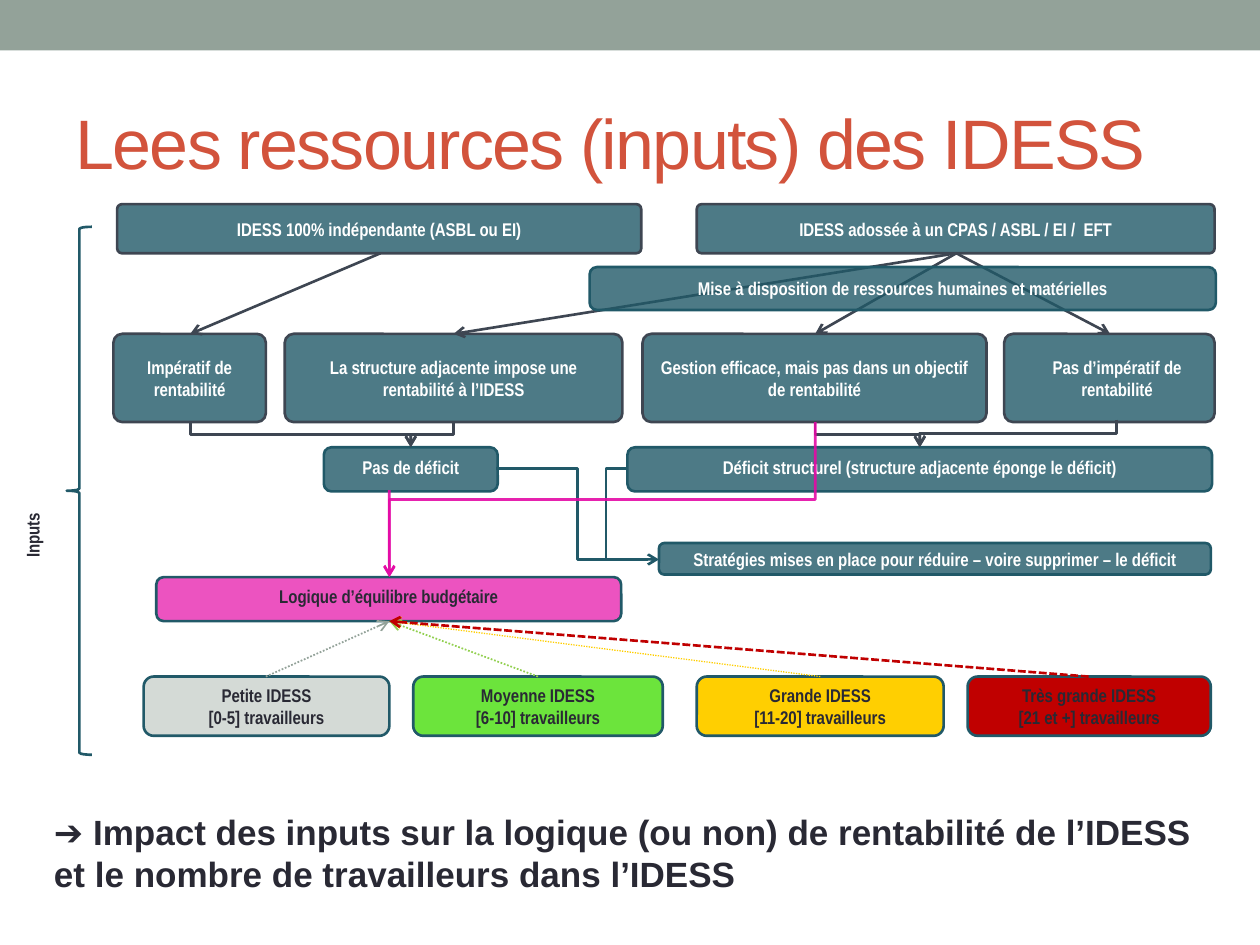
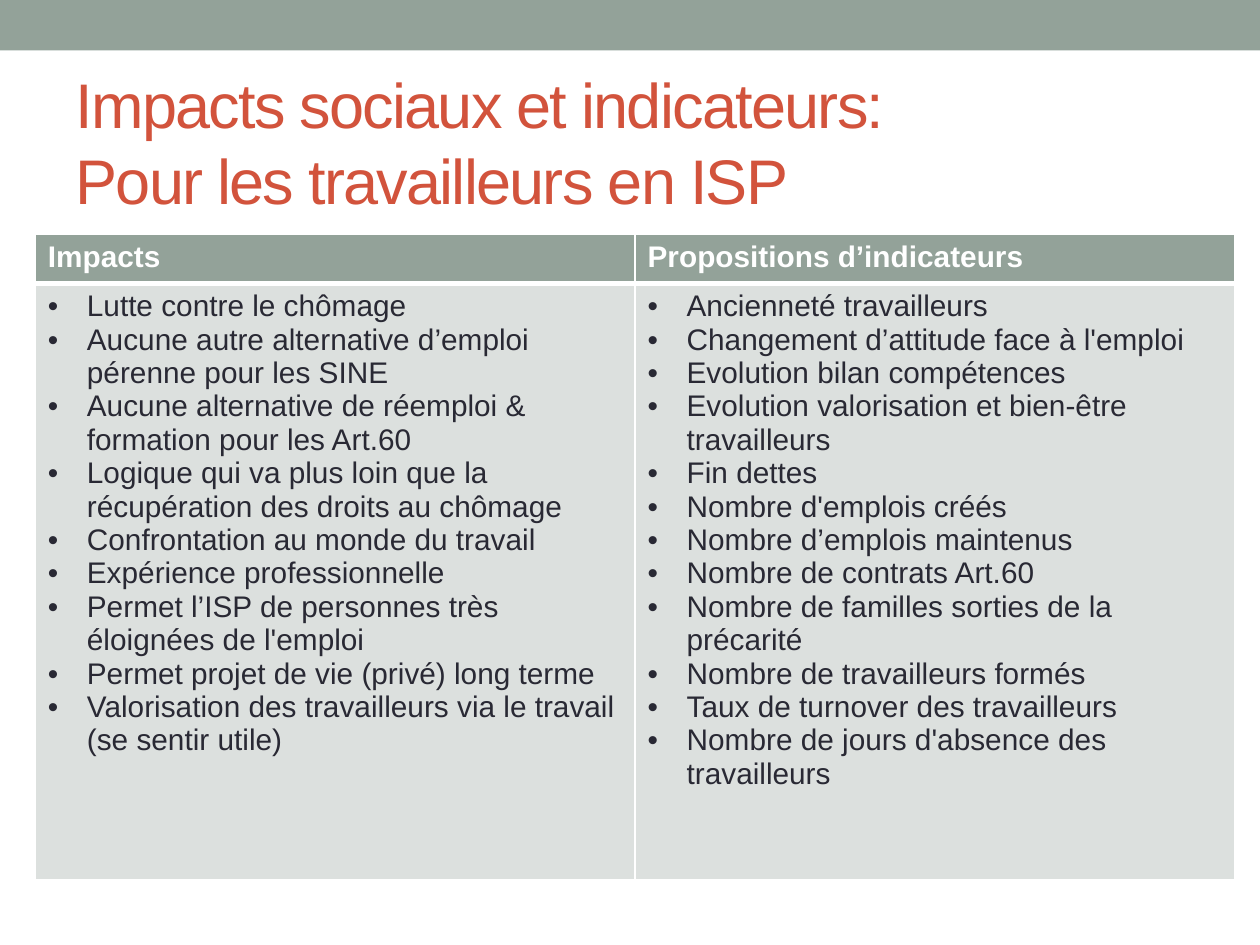
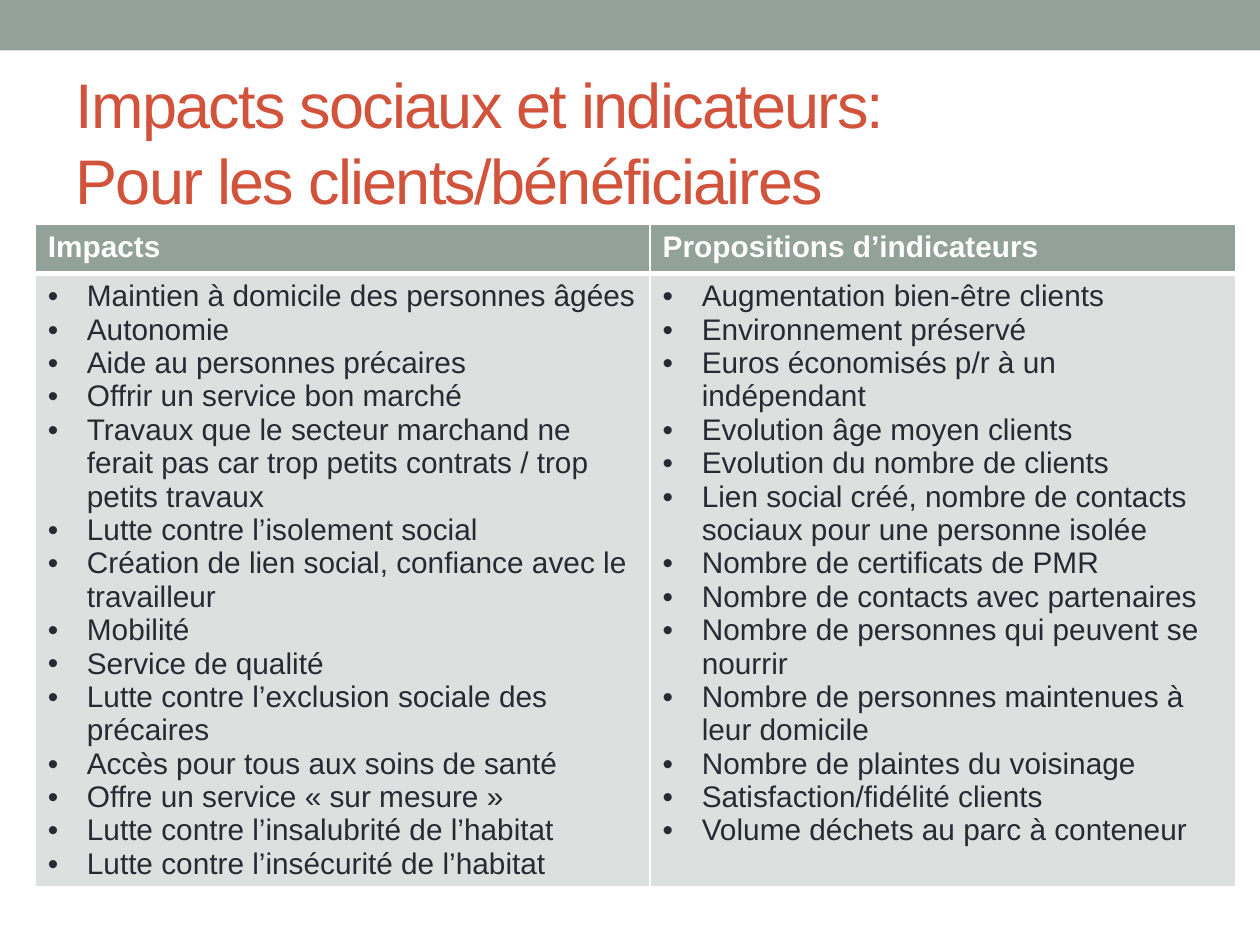
import lxml.etree
import pptx
import pptx.dml.color
import pptx.enum.dml
import pptx.enum.shapes
import pptx.enum.text
import pptx.util
from pptx.oxml.ns import qn

# Shared look
SAGE, RUST, INK, WHITE = "93A299", "D2533C", "292934", "FFFFFF"
TEAL, SLATE, MAGENTA, RED = "215968", "3E4652", "E40AA6", "C00000"
YELLOW, CELL_GREY = "FFCF01", "DCE0DE"
BODY_FONT, LABEL_FONT = "Arial", "Arial Narrow"
LABEL_SIZE, TABLE_SIZE = 10.5, 17

SHAPE = pptx.enum.shapes.MSO_SHAPE
CONNECTOR = pptx.enum.shapes.MSO_CONNECTOR
ANCHOR = pptx.enum.text.MSO_ANCHOR
ALIGN = pptx.enum.text.PP_ALIGN
DASH = pptx.enum.dml.MSO_LINE


def rgb(color):
    return pptx.dml.color.RGBColor.from_string(color)


def inches(*lengths):
    return [pptx.util.Inches(length) for length in lengths]


def paint(fill, color, opacity=100):
    fill.solid()
    fill.fore_color.rgb = rgb(color)
    if opacity < 100:
        color_node = fill._xPr.find(qn("a:solidFill"))[0]
        lxml.etree.SubElement(color_node, qn("a:alpha"), val=str(opacity * 1000))


def style_text(frame, size, color, font=BODY_FONT, bold=False, align=ALIGN.LEFT):
    for para in frame.paragraphs:
        para.alignment = align
        for span in para.runs:
            span.font.name = font
            span.font.size = pptx.util.Pt(size)
            span.font.bold = bold
            span.font.color.rgb = rgb(color)


# Pages
def new_page(deck, title, size):
    page = deck.slides.add_slide(deck.slide_layouts[5])
    band = page.shapes.add_shape(SHAPE.RECTANGLE, *inches(0, 0, 10, 0.4))
    band.shadow.inherit = False
    paint(band.fill, SAGE)
    band.line.fill.background()

    box = page.shapes.title
    box.left, box.top, box.width, box.height = inches(0.5, 0.58, 9, 1.08)
    frame = box.text_frame
    frame.text = title
    frame.auto_size = pptx.enum.text.MSO_AUTO_SIZE.NONE
    frame.vertical_anchor = ANCHOR.MIDDLE
    style_text(frame, size, RUST)
    for span in frame.paragraphs[0].runs:
        span.font._element.set("spc", "-100")
    return page


# Diagram parts
def add_box(page, text, place, fill=TEAL, opacity=80, line=TEAL, color=WHITE,
            anchor=ANCHOR.MIDDLE, corner=0.17, left_inset=0.1):
    box = page.shapes.add_shape(SHAPE.ROUNDED_RECTANGLE, *inches(*place))
    box.adjustments[0] = corner
    box.shadow.inherit = False
    paint(box.fill, fill, opacity)
    box.line.width = pptx.util.Pt(1.5)
    paint(box.line.fill, line)
    frame = box.text_frame
    frame.text = text
    frame.word_wrap = True
    frame.vertical_anchor = anchor
    frame.margin_left = pptx.util.Inches(left_inset)
    style_text(frame, LABEL_SIZE, color, LABEL_FONT, True, ALIGN.CENTER)


def add_text(page, text, place, size, font, align):
    box = page.shapes.add_textbox(*inches(*place))
    box.text_frame.text = text
    box.text_frame.word_wrap = True
    style_text(box.text_frame, size, INK, font, True, align)
    return box


def style_connector(connector, color, width=1.5, dash=None, opacity=100, arrow=True):
    line = connector.line
    line.width = pptx.util.Pt(width)
    paint(line.fill, color, opacity)
    if dash:
        line.dash_style = dash
    if arrow:
        lxml.etree.SubElement(line._get_or_add_ln(), qn("a:tailEnd"), type="arrow")
    lxml.etree.SubElement(connector._element.spPr, qn("a:effectLst"))


def add_line(page, start, end, color, kind=CONNECTOR.STRAIGHT, **style):
    connector = page.shapes.add_connector(kind, *inches(*start, *end))
    style_connector(connector, color, **style)
    return connector


def add_drop_elbow(page, start, end, color, **style):
    """Elbow that leaves downwards: a sideways elbow turned about its centre."""
    (x1, y1), (x2, y2) = start, end
    width, height = y2 - y1, abs(x2 - x1)
    left, top = (x1 + x2 - width) / 2, (y1 + y2 - height) / 2
    connector = add_line(page, (left, top), (left + width, top + height), color,
                         CONNECTOR.ELBOW, **style)
    xfrm = connector._element.spPr.find(qn("a:xfrm"))
    xfrm.set("rot", str((270 if x2 > x1 else 90) * 60000))
    if x2 > x1:
        xfrm.set("flipH", "1")


def build_inputs_page(deck):
    page = new_page(deck, "Lees ressources (inputs) des IDESS", 40)

    # Kinds of IDESS and their profitability rules
    for text, left, width in [
        ("IDESS 100% indépendante (ASBL ou EI)", 0.93, 4.16),
        ("IDESS adossée à un CPAS / ASBL / EI /  EFT", 5.53, 4.11),
    ]:
        add_box(page, text, (left, 1.62, width, 0.39), line=SLATE, corner=0.1)
    for text, left, width, inset in [
        ("Impératif de rentabilité", 0.9, 1.21, 0.1),
        ("La structure adjacente impose une rentabilité à l’IDESS", 2.26, 2.68, 0.1),
        ("Gestion efficace, mais pas dans un objectif de rentabilité", 5.1, 2.73, 0.1),
        ("Pas d’impératif de rentabilité", 7.97, 1.67, 0.22),
    ]:
        add_box(page, text, (left, 2.65, width, 0.7), line=SLATE, corner=0.1,
                left_inset=inset)
    for start_x, end_x in [(7.59, 6.47), (7.59, 8.81), (7.59, 3.6), (3.02, 1.51)]:
        add_line(page, (start_x, 2.01), (end_x, 2.65), SLATE)

    # Deficit outcomes
    for text, left, width in [
        ("Pas de déficit", 2.57, 1.38),
        ("Déficit structurel (structure adjacente éponge le déficit)", 4.98, 4.64),
    ]:
        add_box(page, text, (left, 3.55, width, 0.35), anchor=ANCHOR.TOP)
    for start, end_x in [((1.51, 3.35), 3.26), ((3.6, 3.35), 3.26),
                         ((6.47, 3.35), 7.3), ((8.86, 3.33), 7.3)]:
        add_drop_elbow(page, start, (end_x, 3.55), SLATE)

    # Balanced budget
    add_box(page, "Logique d’équilibre budgétaire", (1.24, 4.58, 3.69, 0.35),
            fill=MAGENTA, opacity=70, color=INK, anchor=ANCHOR.TOP)
    add_line(page, (3.09, 3.89), (3.09, 4.58), MAGENTA, opacity=90)

    # Side brace and its label
    brace = page.shapes.add_shape(SHAPE.LEFT_BRACE, *inches(0.53, 1.8, 0.2, 4.19))
    brace.shadow.inherit = False
    brace.fill.background()
    brace.line.width = pptx.util.Pt(1.5)
    paint(brace.line.fill, TEAL)
    label = add_text(page, "Inputs", (0.12, 3.26, 0.49, 1.98),
                     LABEL_SIZE, LABEL_FONT, ALIGN.CENTER)
    label.text_frame._txBody.bodyPr.set("vert", "vert270")

    # Shared resources and strategies
    add_box(page, "Mise à disposition de ressources humaines et matérielles",
            (4.68, 2.12, 4.97, 0.34))
    add_box(page, "Stratégies mises en place pour réduire – voire supprimer – le déficit",
            (5.23, 4.31, 4.38, 0.25))
    corner = add_line(page, (4.98, 3.72), (4.81, 4.44), TEAL, CONNECTOR.ELBOW, arrow=False)
    corner._element.spPr.find(qn("a:prstGeom")).set("prst", "bentConnector2")

    # Sizes of IDESS
    for text, left, width, fill in [
        ("Petite IDESS\n[0-5] travailleurs", 1.14, 1.95, "D4DAD6"),
        ("Moyenne IDESS\n[6-10] travailleurs", 3.28, 1.98, "6CE43C"),
        ("Grande IDESS\n[11-20] travailleurs", 5.53, 1.96, YELLOW),
        ("Très grande IDESS\n[21 et +] travailleurs", 7.68, 1.93, RED),
    ]:
        add_box(page, text, (left, 5.37, width, 0.47), fill=fill, opacity=100, color=INK)
    for start_x, color, width, dash in [
        (6.51, YELLOW, 0.75, DASH.ROUND_DOT),
        (2.11, SAGE, 1, DASH.ROUND_DOT),
        (4.27, "92D050", 1, DASH.ROUND_DOT),
        (8.64, RED, 1.5, DASH.SQUARE_DOT),
    ]:
        add_line(page, (start_x, 5.37), (3.09, 4.93), color, width=width, dash=dash)

    # Long elbows across the diagram
    add_line(page, (3.94, 3.72), (5.23, 4.44), TEAL, CONNECTOR.ELBOW)
    add_drop_elbow(page, (6.47, 3.35), (3.09, 4.58), MAGENTA, opacity=90)

    add_text(page, "➔ Impact des inputs sur la logique (ou non) de rentabilité de l’IDESS "
             "et le nombre de travailleurs dans l’IDESS",
             (0.33, 6.38, 9.39, 0.77), 20, BODY_FONT, ALIGN.LEFT)


# Tables
def set_borders(cell, bottom):
    properties = cell._tc.get_or_add_tcPr()
    for side, width in [("L", 1), ("R", 1), ("T", 1), ("B", bottom)]:
        line = lxml.etree.SubElement(properties, qn("a:ln" + side),
                                     w=str(pptx.util.Pt(width)))
        solid = lxml.etree.SubElement(line, qn("a:solidFill"))
        lxml.etree.SubElement(solid, qn("a:srgbClr"), val=WHITE)


def add_bullet(para):
    properties = para._p.get_or_add_pPr()
    indent = pptx.util.Inches(0.31)
    properties.set("marL", str(indent))
    properties.set("indent", str(-indent))
    lxml.etree.SubElement(properties, qn("a:buFont"), typeface=BODY_FONT)
    lxml.etree.SubElement(properties, qn("a:buChar"), char="•")


def build_impacts_page(deck, audience, top, widths, impacts, indicators):
    page = new_page(deck, "Impacts sociaux et indicateurs: \v" + audience, 36)
    table = page.shapes.add_table(2, 2, *inches(0.28, top, sum(widths), 5.12)).table
    for row, height in zip(table.rows, inches(0.39, 4.73)):
        row.height = height
    columns = [("Impacts", impacts), ("Propositions d’indicateurs", indicators)]
    for index, (heading, entries) in enumerate(columns):
        table.columns[index].width = pptx.util.Inches(widths[index])

        header = table.cell(0, index)
        header.text_frame.text = heading
        style_text(header.text_frame, TABLE_SIZE, WHITE, bold=True)
        set_borders(header, 3)
        paint(header.fill, SAGE)

        body = table.cell(1, index)
        body.text_frame.text = "\n".join(entries)
        style_text(body.text_frame, TABLE_SIZE, INK)
        for para in body.text_frame.paragraphs:
            add_bullet(para)
        set_borders(body, 1)
        paint(body.fill, CELL_GREY)


WORKER_IMPACTS = [
    "Lutte contre le chômage",
    "Aucune autre alternative d’emploi pérenne pour les SINE",
    "Aucune alternative de réemploi & formation pour les Art.60",
    "Logique qui va plus loin que la récupération des droits au chômage",
    "Confrontation au monde du travail",
    "Expérience professionnelle",
    "Permet l’ISP de personnes très éloignées de l'emploi",
    "Permet projet de vie (privé) long terme",
    "Valorisation des travailleurs via le travail (se sentir utile)",
]
WORKER_INDICATORS = [
    "Ancienneté travailleurs",
    "Changement d’attitude face à l'emploi",
    "Evolution bilan compétences",
    "Evolution valorisation et bien-être travailleurs",
    "Fin dettes",
    "Nombre d'emplois créés",
    "Nombre d’emplois maintenus",
    "Nombre de contrats Art.60",
    "Nombre de familles sorties de la précarité",
    "Nombre de travailleurs formés",
    "Taux de turnover des travailleurs",
    "Nombre de jours d'absence des travailleurs",
]
CLIENT_IMPACTS = [
    "Maintien à domicile des personnes âgées",
    "Autonomie",
    "Aide au personnes précaires",
    "Offrir un service bon marché",
    "Travaux que le secteur marchand ne ferait pas car trop petits contrats / trop "
    "petits travaux",
    "Lutte contre l’isolement social",
    "Création de lien social, confiance avec le travailleur",
    "Mobilité",
    "Service de qualité",
    "Lutte contre l’exclusion sociale des précaires",
    "Accès pour tous aux soins de santé",
    "Offre un service « sur mesure »",
    "Lutte contre l’insalubrité de l’habitat",
    "Lutte contre l’insécurité de l’habitat",
]
CLIENT_INDICATORS = [
    "Augmentation bien-être clients",
    "Environnement préservé",
    "Euros économisés p/r à un indépendant",
    "Evolution âge moyen clients",
    "Evolution du nombre de clients",
    "Lien social créé, nombre de contacts sociaux pour une personne isolée",
    "Nombre de certificats de PMR",
    "Nombre de contacts avec partenaires",
    "Nombre de personnes qui peuvent se nourrir",
    "Nombre de personnes maintenues à leur domicile",
    "Nombre de plaintes du voisinage",
    "Satisfaction/fidélité clients",
    "Volume déchets au parc à conteneur",
]


def main():
    deck = pptx.Presentation()
    deck.slide_width, deck.slide_height = inches(10, 7.5)
    build_inputs_page(deck)
    build_impacts_page(deck, "Pour les travailleurs en ISP", 1.86, (4.76, 4.76),
                       WORKER_IMPACTS, WORKER_INDICATORS)
    build_impacts_page(deck, "Pour les clients/bénéficiaires", 1.78, (4.88, 4.65),
                       CLIENT_IMPACTS, CLIENT_INDICATORS)
    deck.save("out.pptx")


if __name__ == "__main__":
    main()
